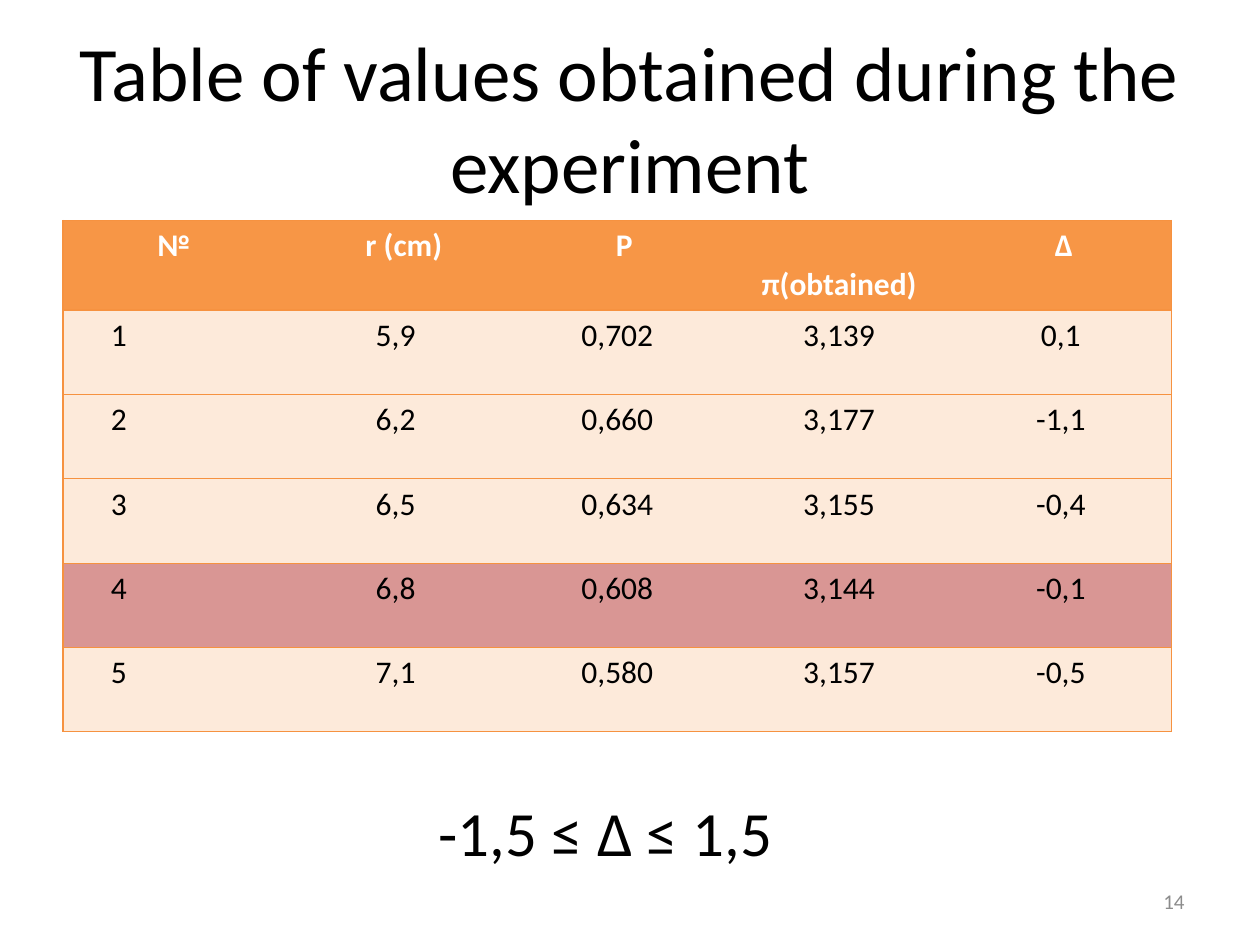
from dataclasses import dataclass

import lxml.etree
import pptx
import pptx.dml.color
import pptx.enum.text
import pptx.oxml.ns
import pptx.util

Inches = pptx.util.Inches
Align = pptx.enum.text.PP_ALIGN
Anchor = pptx.enum.text.MSO_ANCHOR

FONT = "Calibri"
BLACK, WHITE, GREY = "000000", "FFFFFF", "8C8C8C"
ORANGE, PEACH, ROSE, RULE = "F79646", "FDEADA", "D99694", "F69240"
COLUMN_WIDTH, HEADER_HEIGHT, ROW_HEIGHT = 1.76, 0.71, 0.67
CELL_MARGIN = 0.1
HIGHLIGHTED_ROW = 4


@dataclass
class Label:
    text: str
    left: float
    top: float
    width: float
    height: float
    size: float
    color: str = BLACK
    align: Align = Align.CENTER
    anchor: Anchor = Anchor.MIDDLE


@dataclass
class Heading:
    text: str
    shift: float = 0
    anchor: Anchor = Anchor.TOP


LABELS = [
    Label("Table of values obtained during the experiment", 0.5, 0.3, 9, 1.25, 44),
    Label("-1,5 ≤ Δ ≤ 1,5", 3.36, 6.25, 2.89, 0.71, 36, anchor=Anchor.TOP),
    Label("14", 7.17, 6.95, 2.33, 0.4, 12, GREY, Align.RIGHT),
]

HEADINGS = [
    Heading("№"),
    Heading("r (cm)", 0.13),
    Heading("P", 0.11),
    Heading("π(obtained)", anchor=Anchor.BOTTOM),
    Heading("Δ", 0.05),
]

MEASUREMENTS = [
    ("1", "5,9", "0,702", "3,139", "0,1"),
    ("2", "6,2", "0,660", "3,177", "-1,1"),
    ("3", "6,5", "0,634", "3,155", "-0,4"),
    ("4", "6,8", "0,608", "3,144", "-0,1"),
    ("5", "7,1", "0,580", "3,157", "-0,5"),
]


def rgb(value: str) -> pptx.dml.color.RGBColor:
    return pptx.dml.color.RGBColor.from_string(value)


def write(frame, text: str, size: float, color: str, align: Align, bold: bool = False) -> None:
    paragraph = frame.paragraphs[0]
    paragraph.text = text
    paragraph.alignment = align
    paragraph.font.name = FONT
    paragraph.font.size = pptx.util.Pt(size)
    paragraph.font.bold = bold
    paragraph.font.color.rgb = rgb(color)


def add_label(slide, label: Label) -> None:
    box = slide.shapes.add_textbox(
        Inches(label.left), Inches(label.top), Inches(label.width), Inches(label.height))
    box.text_frame.word_wrap = True
    box.text_frame.vertical_anchor = label.anchor
    write(box.text_frame, label.text, label.size, label.color, label.align)


def set_borders(cell, visible: set[str]) -> None:
    """Rule the named sides (L, R, T, B) and clear the others."""
    properties = cell._tc.get_or_add_tcPr()
    qn = pptx.oxml.ns.qn
    for position, side in enumerate("LRTB"):
        line = lxml.etree.Element(qn(f"a:ln{side}"), w=str(pptx.util.Pt(0.75)))
        if side in visible:
            fill = lxml.etree.SubElement(line, qn("a:solidFill"))
            lxml.etree.SubElement(fill, qn("a:srgbClr"), val=RULE)
        else:
            lxml.etree.SubElement(line, qn("a:noFill"))
        properties.insert(position, line)


def fill_cell(cell, text: str, fill: str, color: str, align: Align,
              shift: float, bold: bool, sides: set[str]) -> None:
    cell.fill.solid()
    cell.fill.fore_color.rgb = rgb(fill)
    cell.margin_left = Inches(CELL_MARGIN + shift)
    write(cell.text_frame, text, 18, color, align, bold)
    set_borders(cell, sides)


def add_results(slide) -> None:
    columns, rows = len(HEADINGS), len(MEASUREMENTS) + 1
    height = HEADER_HEIGHT + ROW_HEIGHT * len(MEASUREMENTS)
    results = slide.shapes.add_table(
        rows, columns, Inches(0.5), Inches(1.75),
        Inches(COLUMN_WIDTH * columns), Inches(height)).table
    for column in results.columns:
        column.width = Inches(COLUMN_WIDTH)
    for index, row in enumerate(results.rows):
        row.height = Inches(ROW_HEIGHT if index else HEADER_HEIGHT)

    # Only the outer edges have vertical rules
    edges = [{"T", "B"} for _ in HEADINGS]
    edges[0].add("L")
    edges[-1].add("R")

    # Header row
    for index, heading in enumerate(HEADINGS):
        cell = results.cell(0, index)
        # The shift moves centred text, so the margin grows by twice as much
        fill_cell(cell, heading.text, ORANGE, WHITE, Align.CENTER,
                  heading.shift, True, edges[index])
        cell.vertical_anchor = heading.anchor

    # Measurements, with the row numbers indented from the left
    for number, measurement in enumerate(MEASUREMENTS, start=1):
        fill = ROSE if number == HIGHLIGHTED_ROW else PEACH
        for index, value in enumerate(measurement):
            align, shift = (Align.CENTER, 0) if index else (Align.LEFT, 0.28)
            fill_cell(results.cell(number, index), value, fill, BLACK,
                      align, shift, False, edges[index])


def main() -> None:
    presentation = pptx.Presentation()
    presentation.slide_width = Inches(10)
    presentation.slide_height = Inches(7.5)
    slide = presentation.slides.add_slide(presentation.slide_layouts[6])
    title, *footers = LABELS
    add_label(slide, title)
    add_results(slide)
    for footer in footers:
        add_label(slide, footer)
    presentation.save("out.pptx")


if __name__ == "__main__":
    main()
